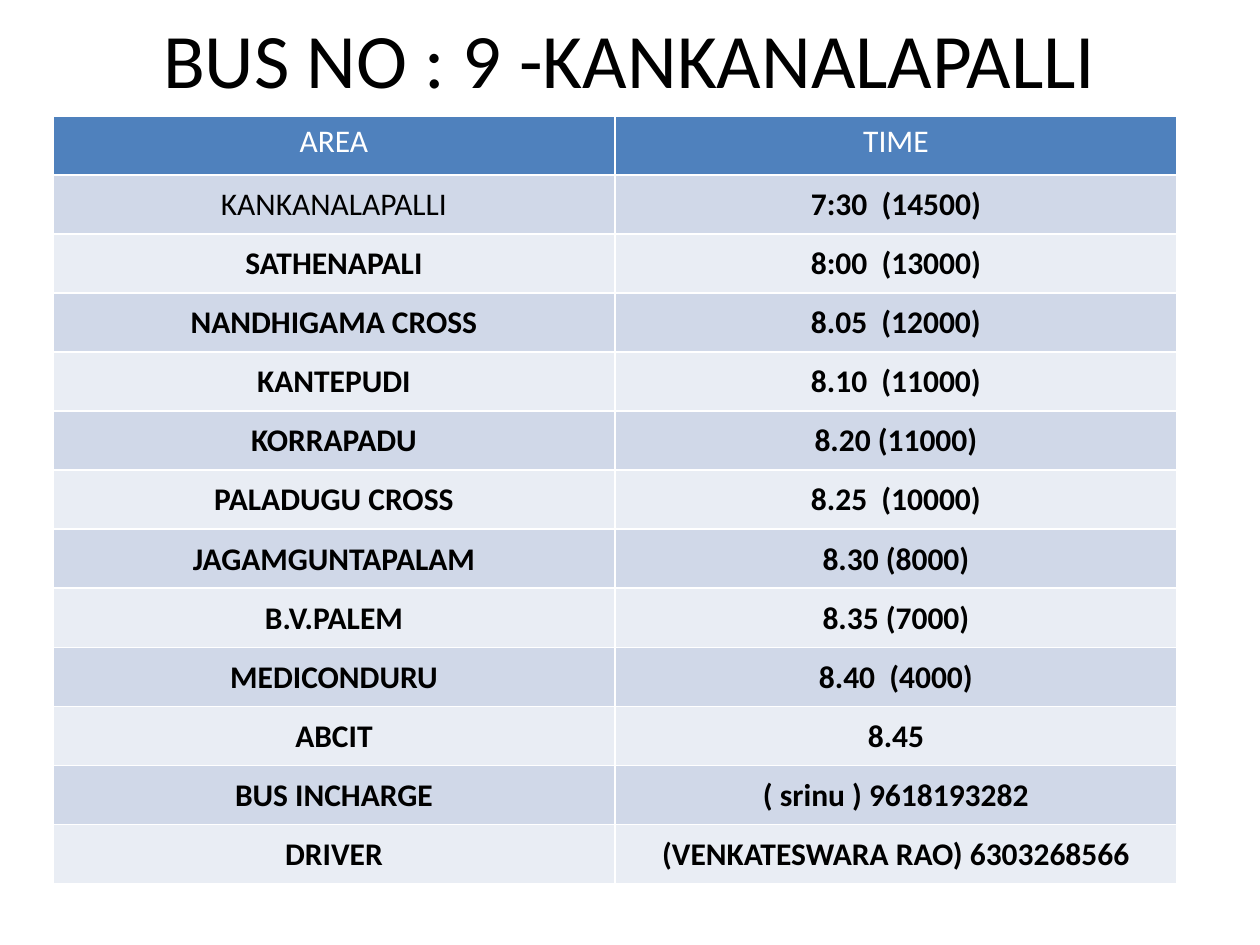
from collections import namedtuple

from lxml.etree import SubElement
from pptx import Presentation
from pptx.dml.color import RGBColor
from pptx.enum.text import MSO_ANCHOR as Anchor, PP_ALIGN as Align
from pptx.oxml.ns import qn
from pptx.util import Pt

PX = 914400 / 126
Box = namedtuple("Box", "left top width height")

BLACK = RGBColor(0x00, 0x00, 0x00)
WHITE = RGBColor(0xFF, 0xFF, 0xFF)
HEADER_BLUE = RGBColor(0x4F, 0x81, 0xBD)
BANDS = (RGBColor(0xD0, 0xD8, 0xE8), RGBColor(0xE9, 0xED, 0xF4))

HEADINGS = ("AREA", "TIME")
STOPS = [
    ("KANKANALAPALLI", "7:30  (14500)"),
    ("SATHENAPALI", "8:00  (13000)"),
    ("NANDHIGAMA CROSS", "8.05  (12000)"),
    ("KANTEPUDI", "8.10  (11000)"),
    ("KORRAPADU", "8.20 (11000)"),
    ("PALADUGU CROSS", "8.25  (10000)"),
    ("JAGAMGUNTAPALAM", "8.30 (8000)"),
    ("B.V.PALEM", "8.35 (7000)"),
    ("MEDICONDURU", "8.40  (4000)"),
    ("ABCIT", "8.45"),
    ("BUS INCHARGE", "( srinu ) 9618193282"),
    ("DRIVER", "(VENKATESWARA RAO) 6303268566"),
]


def px(length):
    return round(length * PX)


def assign(target, values):
    for name, value in values.items():
        setattr(target, name, value)


def write(frame, text, size, color, bold=False):
    para = frame.paragraphs[0]
    para.alignment = Align.CENTER
    span = para.add_run()
    span.text = text
    assign(span.font, {"name": "Calibri", "size": Pt(size), "bold": bold})
    span.font.color.rgb = color


def add_borders(cell, color):
    props = cell._tc.get_or_add_tcPr()
    for side in ("lnL", "lnR", "lnT", "lnB"):
        line = SubElement(props, qn(f"a:{side}"), w=str(Pt(1)))
        fill = SubElement(line, qn("a:solidFill"))
        SubElement(fill, qn("a:srgbClr"), val=str(color))


def fill_cell(cell, text, fill, color, bold, layout):
    assign(cell, layout)
    add_borders(cell, WHITE)
    cell.fill.solid()
    cell.fill.fore_color.rgb = fill
    write(cell.text_frame, text, 18, color, bold)


def place_title(page, box, text):
    title = page.shapes.title
    assign(title, {name: px(value) for name, value in box._asdict().items()})
    title.text_frame.vertical_anchor = Anchor.MIDDLE
    write(title.text_frame, text, 44, BLACK)


def place_timetable(page, box, headings, stops):
    rows, columns = len(stops) + 1, len(headings)
    table = page.shapes.add_table(rows, columns, *map(px, box)).table
    for row in table.rows:
        row.height = px(box.height / rows)
    for column in table.columns:
        column.width = px(box.width / columns)
    header_layout = {"vertical_anchor": Anchor.TOP}
    stop_layout = {
        "vertical_anchor": Anchor.MIDDLE,
        "margin_left": px(1),
        "margin_right": px(1),
        "margin_top": px(1),
        "margin_bottom": 0,
    }
    for c, heading in enumerate(headings):
        fill_cell(table.cell(0, c), heading, HEADER_BLUE, WHITE, False, header_layout)
    for r, stop in enumerate(stops, 1):
        for c, text in enumerate(stop):
            bold = (r, c) != (1, 0)
            fill_cell(table.cell(r, c), text, BANDS[(r - 1) % 2], BLACK, bold, stop_layout)


def main():
    deck = Presentation()
    assign(deck, {"slide_width": px(1260), "slide_height": px(945)})
    page = deck.slides.add_slide(deck.slide_layouts[5])
    place_title(page, Box(94, 0, 1072, 116), "BUS NO : 9 -KANKANALAPALLI")
    place_timetable(page, Box(53, 116, 1124, 768), HEADINGS, STOPS)
    deck.save("out.pptx")


if __name__ == "__main__":
    main()
